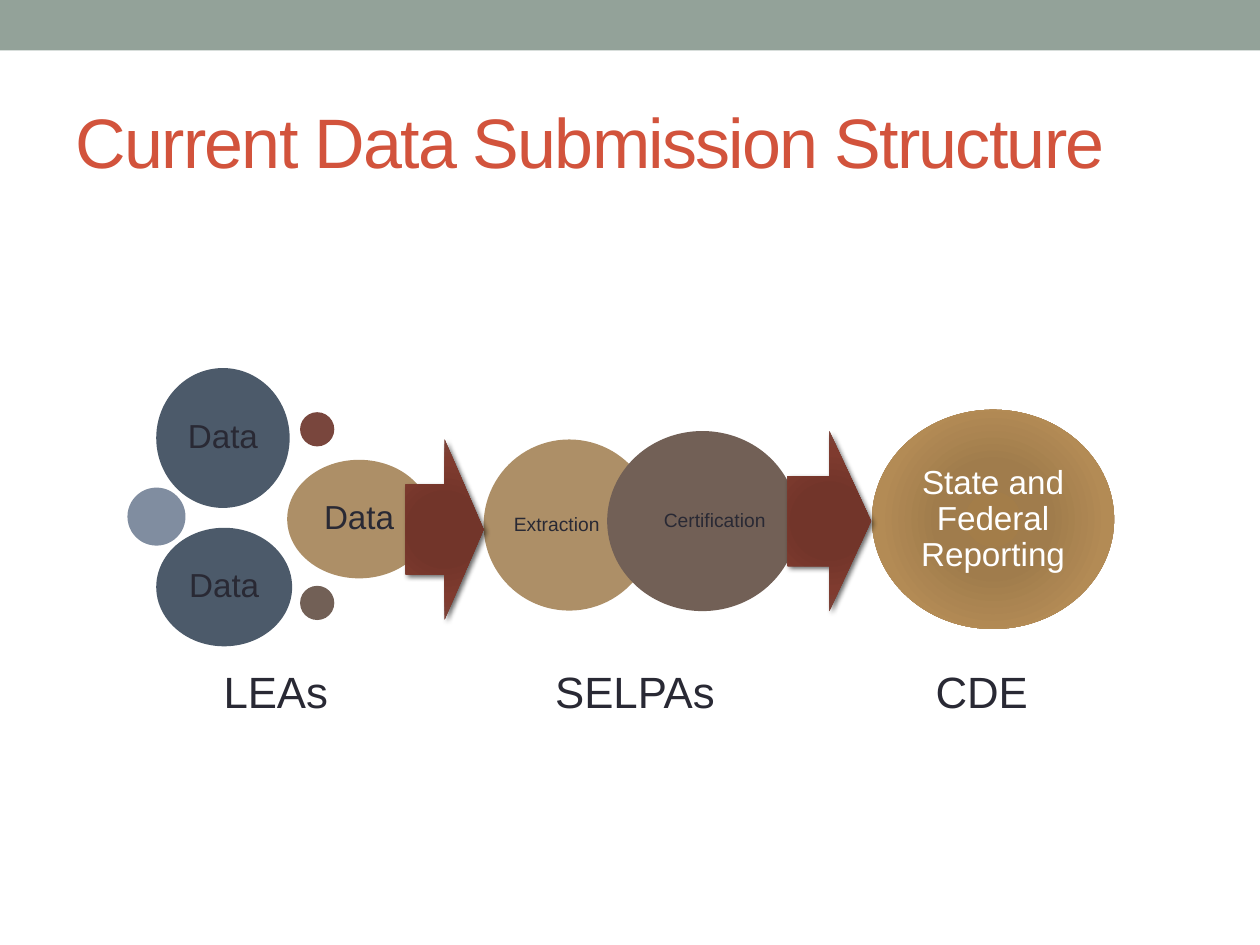
from pptx import Presentation
from pptx.dml.color import RGBColor
from pptx.enum.shapes import MSO_SHAPE as Shape
from pptx.enum.text import MSO_ANCHOR as Anchor, PP_ALIGN as Align
from pptx.oxml import parse_xml
from pptx.oxml.ns import nsdecls, qn
from pptx.util import Cm, Pt

COLORS = {
    "bar": "93A299", "title": "D2533C", "text": "292934", "white": "FFFFFF",
    "slate": "4C5A6A", "blue": "808DA0", "tan": "AD8F67",
    "brown": "726056", "rust": "79463D",
}
STOPS = (0, 34, 70, 100)
GRADIENTS = {
    "gold": ("A37D49", "A07C4C", "B38B55", "AD8F67"),
    "red": ("743327", "72352A", "7F3B2F", "79463D"),
}


class Diagram:
    font = "Arial"

    def __init__(self, slide):
        self.s = slide

    def style(self, p, size, color, align=Align.CENTER):
        p.alignment = align
        p.font.name = self.font
        p.font.size = Pt(size)
        p.font.color.rgb = RGBColor.from_string(COLORS[color])

    def set_text(self, sp, text, size, color, left=0, right=0):
        tf = sp.text_frame
        tf.word_wrap = True
        tf.vertical_anchor = Anchor.MIDDLE
        tf.margin_left, tf.margin_right = Cm(left), Cm(right)
        tf.margin_top = tf.margin_bottom = 0
        p = tf.paragraphs[0]
        p.text = text
        p.line_spacing = 0.9
        self.style(p, size, color)

    def title(self, text, box):
        sp = self.s.shapes.title
        sp.left, sp.top, sp.width, sp.height = map(Cm, box)
        tf = sp.text_frame
        tf.vertical_anchor = Anchor.MIDDLE
        p = tf.paragraphs[0]
        r = p.add_run()
        r.text = text
        r.font._element.set("spc", "-100")
        self.style(p, 40, "title", Align.LEFT)

    def shape(self, kind, box, fill):
        """Add a borderless shape filled with a named colour or gradient."""
        sp = self.s.shapes.add_shape(kind, *map(Cm, box))
        sp.shadow.inherit = False
        sp.line.fill.background()
        if fill in GRADIENTS:
            self.gradient(sp, GRADIENTS[fill])
        else:
            sp.fill.solid()
            sp.fill.fore_color.rgb = RGBColor.from_string(COLORS[fill])
        return sp

    def gradient(self, sp, colors):
        stops = "".join(
            f'<a:gs pos="{pos * 1000}"><a:srgbClr val="{c}"/></a:gs>'
            for pos, c in zip(STOPS, colors))
        sp.fill.background()
        pr = sp._element.spPr
        pr.replace(pr.find(qn("a:noFill")), parse_xml(
            f'<a:gradFill {nsdecls("a")} rotWithShape="1"><a:gsLst>{stops}</a:gsLst>'
            '<a:path path="circle"><a:fillToRect l="100000" t="100000" '
            'r="100000" b="100000"/></a:path></a:gradFill>'))

    def circle(self, box, fill, text="", size=19, color="text", left=0, right=0):
        sp = self.shape(Shape.OVAL, box, fill)
        if text:
            self.set_text(sp, text, size, color, left, right)

    def arrow(self, box):
        sp = self.shape(Shape.RIGHT_ARROW, box, "red")
        sp._element.spPr.find(qn("a:effectLst")).append(parse_xml(
            f'<a:outerShdw {nsdecls("a")} blurRad="{Pt(3)}" dist="{Pt(2)}" '
            'dir="2700000" rotWithShape="0"><a:srgbClr val="000000">'
            '<a:alpha val="60000"/></a:srgbClr></a:outerShdw>'))

    def label(self, text, left):
        sp = self.s.shapes.add_textbox(Cm(left), Cm(13.26), Cm(5.74), Cm(1.49))
        self.set_text(sp, text, 25, "text")


def main():
    prs = Presentation()
    prs.slide_width, prs.slide_height = Cm(25.4), Cm(19.05)
    d = Diagram(prs.slides.add_slide(prs.slide_layouts[5]))

    d.shape(Shape.RECTANGLE, (0, 0, 25.4, 1.02), "bar")
    d.title("Current Data Submission Structure", (1.27, 1.47, 22.86, 2.74))

    for text, left in (("LEAs", 2.69), ("SELPAs", 9.93), ("CDE", 16.92)):
        d.label(text, left)

    d.circle((9.75, 8.86, 3.45, 3.45), "tan", "Extraction", 11, right=0.5)
    d.circle((12.24, 8.69, 3.84, 3.63), "brown", "Certification", 11, left=0.5)

    for box, fill in (((3.15, 7.42, 2.69, 2.82), "slate"),
                      ((5.79, 9.27, 2.9, 2.39), "tan"),
                      ((3.15, 10.64, 2.74, 2.39), "slate")):
        d.circle(box, fill, "Data")
    for left, top, size, fill in ((2.57, 9.83, 1.17, "blue"),
                                  (6.05, 8.31, 0.69, "rust"),
                                  (6.05, 11.81, 0.69, "brown")):
        d.circle((left, top, size, size), fill)

    d.circle((17.58, 8.26, 4.88, 4.42), "gold", "State and Federal Reporting",
             color="white")

    d.arrow((8.18, 8.86, 1.57, 3.63))
    d.arrow((15.88, 8.69, 1.68, 3.63))

    prs.save("out.pptx")


if __name__ == "__main__":
    main()
